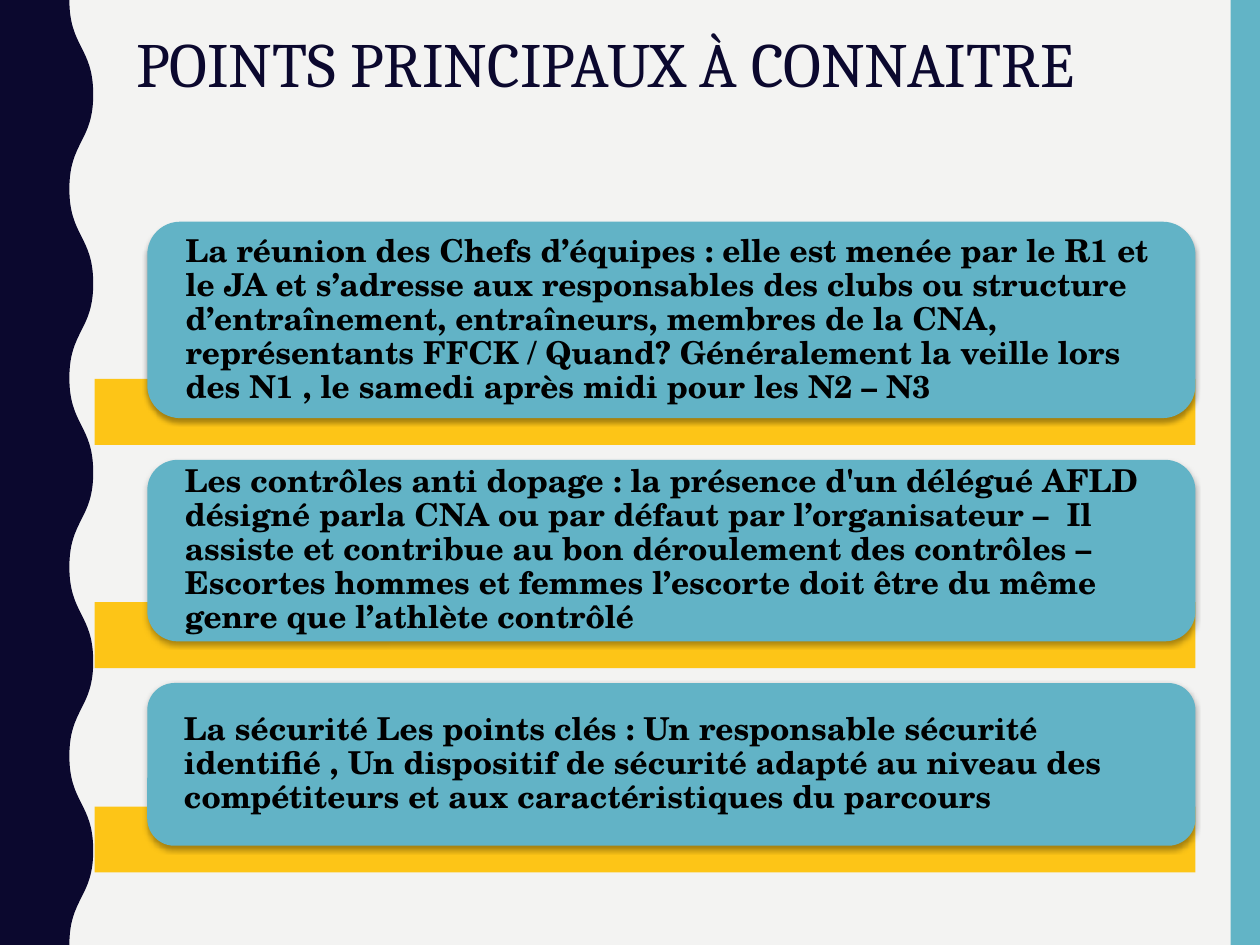
"""Build the slide on the main points to know, with three cards on yellow bars."""
from lxml import etree
from pptx import Presentation
from pptx.dml.color import RGBColor
from pptx.enum.shapes import MSO_SHAPE
from pptx.enum.text import MSO_ANCHOR, MSO_AUTO_SIZE, PP_ALIGN
from pptx.oxml.ns import qn
from pptx.util import Cm, Pt

RECTANGLE, ROUNDED = MSO_SHAPE.RECTANGLE, MSO_SHAPE.ROUNDED_RECTANGLE
TOP, MIDDLE = MSO_ANCHOR.TOP, MSO_ANCHOR.MIDDLE
LEFT, NO_AUTOFIT = PP_ALIGN.LEFT, MSO_AUTO_SIZE.NONE

NAVY, TEAL, CARD_TEAL, YELLOW = "0B082E", "62B4C6", "62B3C6", "FFC000"
CARDS = [
    (3.96, "La réunion des Chefs d’équipes : elle est menée par le R1 et le JA et s’adresse "
           "aux responsables des clubs ou structure d’entraînement, entraîneurs, membres de "
           "la CNA, représentants FFCK / Quand? Généralement la veille lors des N1 , le "
           "samedi après midi pour les N2 – N3"),
    (3.66, "Les contrôles anti dopage : la présence d'un délégué AFLD désigné parla CNA ou "
           "par défaut par l’organisateur –  Il assiste et contribue au bon déroulement des "
           "contrôles – Escortes hommes et femmes l’escorte doit être du même genre que "
           "l’athlète contrôlé"),
    (3.28, "La sécurité Les points clés : Un responsable sécurité identifié , Un dispositif "
           "de sécurité adapté au niveau des compétiteurs et aux caractéristiques du parcours"),
]


def paint(shape, color):
    """Give a shape a plain fill with no line and no shadow."""
    shape.fill.solid()
    shape.fill.fore_color.rgb = RGBColor.from_string(color)
    shape.line.fill.background()
    shape.shadow.inherit = False


def write(shape, text, color, frame_format, font_format):
    """Put one left-aligned paragraph into a shape."""
    frame = shape.text_frame
    frame.text = text
    for name, value in frame_format.items():
        setattr(frame, name, value)
    paragraph = frame.paragraphs[0]
    paragraph.alignment = LEFT
    paragraph.line_spacing = 0.9
    font = paragraph.runs[0].font
    for name, value in font_format.items():
        setattr(font, name, value)
    font.color.rgb = RGBColor.from_string(color)


presentation = Presentation()
presentation.slide_width, presentation.slide_height = Cm(25.4), Cm(19.05)
slide = presentation.slides.add_slide(presentation.slide_layouts[5])
slide.background.fill.solid()
slide.background.fill.fore_color.rgb = RGBColor.from_string("F3F3F2")
shapes = slide.shapes

side_band = shapes.add_shape(RECTANGLE, Cm(24.81), 0, Cm(0.59), Cm(19.05))
paint(side_band, TEAL)

wave_x = [Cm(1.4), Cm(1.88)]
half_waves = 10
half_height = presentation.slide_height // half_waves
wave_points = [(wave_x[index % 2], index * half_height) for index in range(half_waves + 1)]
builder = shapes.build_freeform(*wave_points[0])
builder.add_line_segments(wave_points[1:] + [(0, presentation.slide_height), (0, 0)])
wave = builder.convert_to_shape()
paint(wave, NAVY)
wave_lines = list(wave._element.iter(qn("a:lnTo")))[:half_waves]
for line, (start_x, start_y), (end_x, end_y) in zip(wave_lines, wave_points, wave_points[1:]):
    middle_y = (start_y + end_y) // 2
    curve = etree.Element(qn("a:cubicBezTo"))
    for x, y in [(start_x, middle_y), (end_x, middle_y), (end_x, end_y)]:
        etree.SubElement(curve, qn("a:pt"), x=str(x), y=str(y))
    line.getparent().replace(line, curve)

title = shapes.title
title.left, title.top, title.width, title.height = Cm(2.49), Cm(0.53), Cm(22.4), Cm(3.81)
write(title, "POINTS PRINCIPAUX À CONNAITRE", NAVY,
      {"vertical_anchor": TOP, "word_wrap": True, "auto_size": NO_AUTOFIT},
      {"name": "Cambria", "size": Pt(36), "bold": False})

bar_height, bar_overlap, gap = 1.33, 0.79, 0.3
card_top = 4.47
for card_height, text in CARDS:
    bar_top = card_top + card_height - bar_overlap
    bar = shapes.add_shape(RECTANGLE, Cm(1.91), Cm(bar_top), Cm(22.19), Cm(bar_height))
    paint(bar, YELLOW)
    bar_color = bar._element.spPr.find(qn("a:solidFill"))[0]
    etree.SubElement(bar_color, qn("a:alpha"), val="90000")

    card = shapes.add_shape(ROUNDED, Cm(2.97), Cm(card_top), Cm(21.13), Cm(card_height))
    card.adjustments[0] = 0.167
    paint(card, CARD_TEAL)
    effects = card._element.spPr.find(qn("a:effectLst"))
    shadow = etree.SubElement(effects, qn("a:outerShdw"), blurRad=str(Pt(3.1)),
                              dist=str(Pt(1.8)), dir="5400000", rotWithShape="0")
    shadow_color = etree.SubElement(shadow, qn("a:srgbClr"), val="000000")
    etree.SubElement(shadow_color, qn("a:alpha"), val="35000")
    write(card, text, "000000",
          {"vertical_anchor": MIDDLE, "word_wrap": True, "margin_left": Cm(0.58),
           "margin_right": Cm(0.58), "margin_top": 0, "margin_bottom": 0},
          {"name": "TeX Gyre Schola", "size": Pt(18), "bold": True})
    card_top = bar_top + bar_height + gap

presentation.save("out.pptx")
